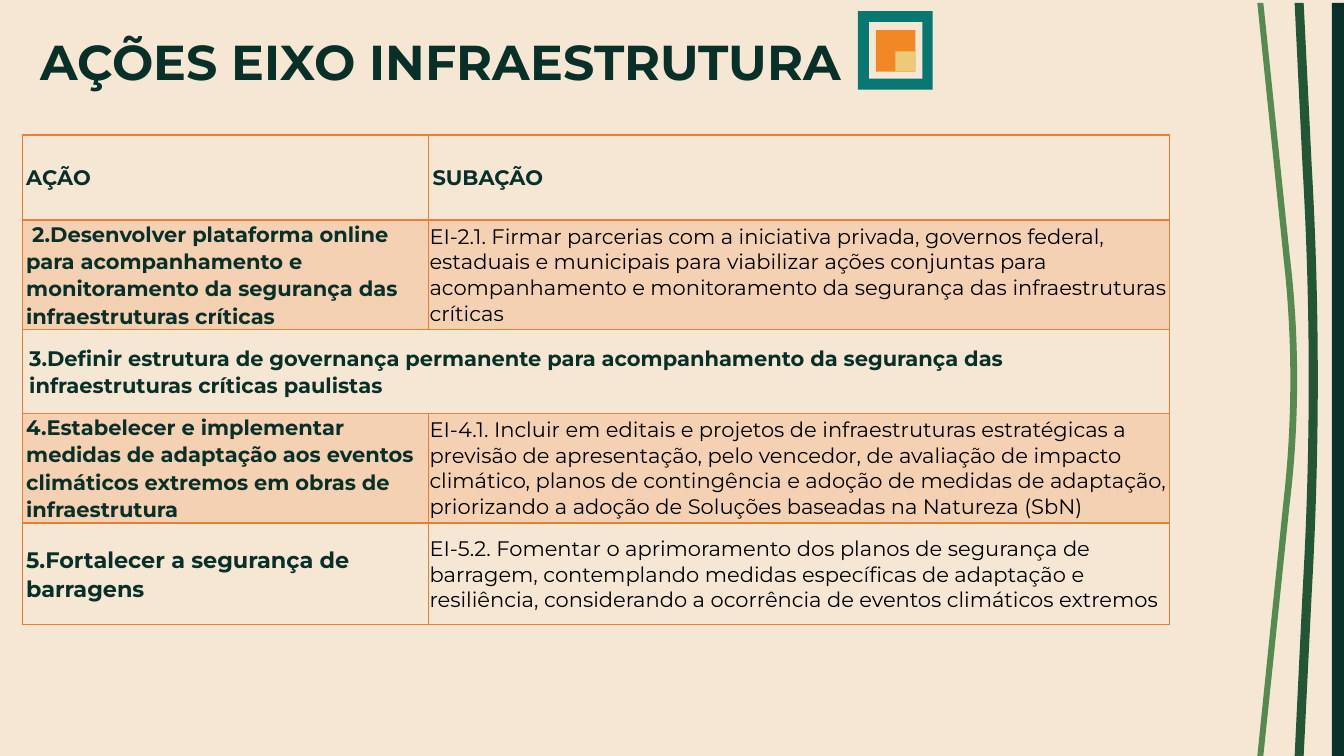
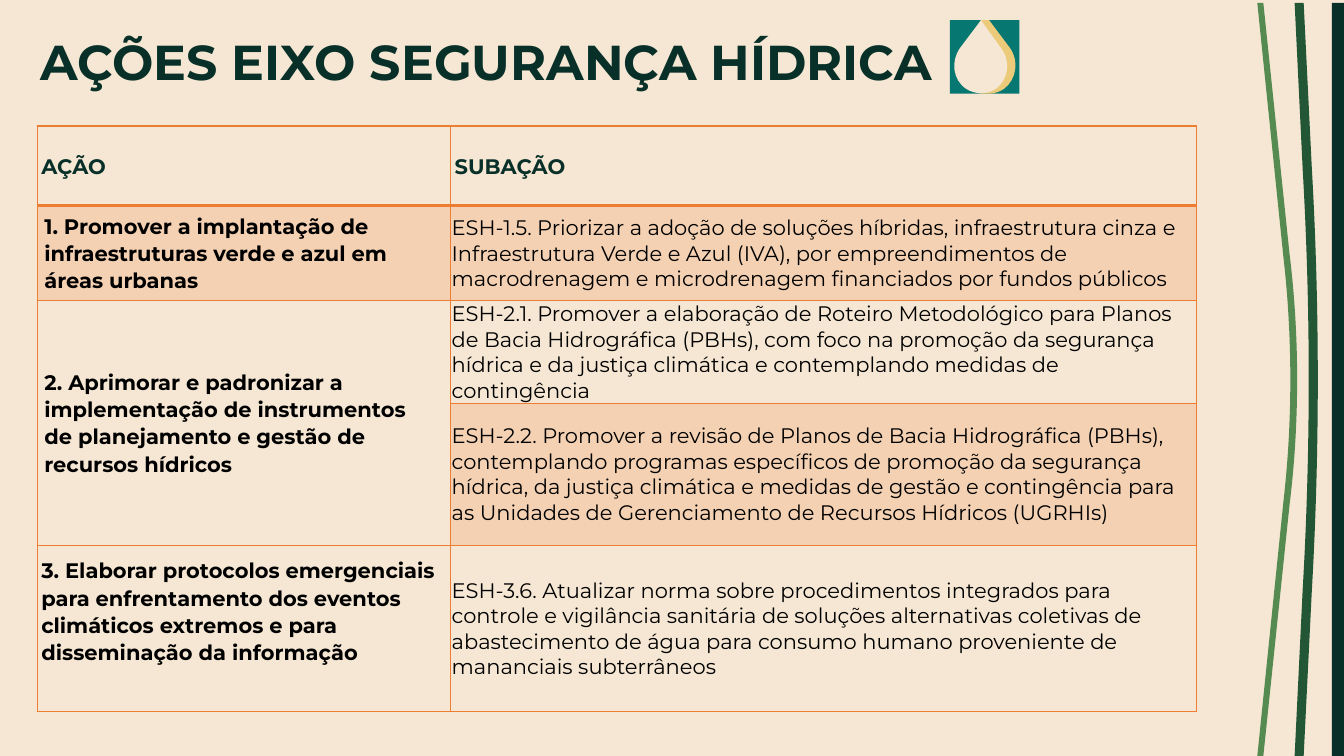
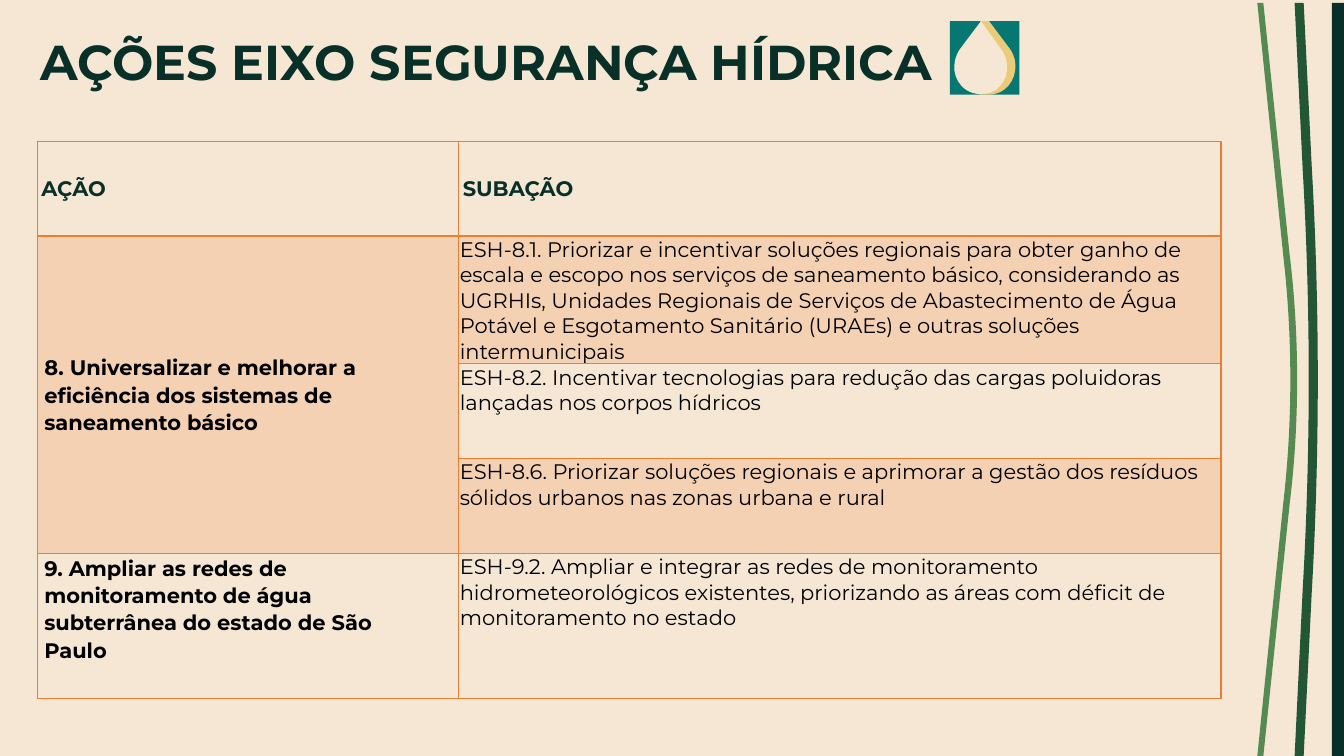
"""Build three slides of climate action tables, by axis."""
from lxml import etree
from pptx import Presentation
from pptx import util as u
from pptx.dml.color import RGBColor
from pptx.enum import shapes, text
from pptx.oxml.ns import qn

CREAM = RGBColor(0xF5, 0xE7, 0xD3)
DARK = RGBColor(0x08, 0x30, 0x28)
FOREST = RGBColor(0x23, 0x56, 0x35)
LEAF = RGBColor(0x55, 0x8A, 0x50)
TEAL = RGBColor(0x07, 0x78, 0x71)
SAND = RGBColor(0xEB, 0xCB, 0x7A)
AMBER = RGBColor(0xF1, 0x88, 0x25)
ORANGE = RGBColor(0xED, 0x7D, 0x31)
BLACK = RGBColor(0, 0, 0)
FONT = "Montserrat"

presentation = Presentation()
presentation.slide_width = u.Inches(13.33)
presentation.slide_height = u.Inches(7.5)
GRID = presentation.slide_height / 7.5


def paint(shape, color):
    """Give a shape a plain fill without line or shadow."""
    shape.fill.solid()
    shape.fill.fore_color.rgb = color
    shape.line.fill.background()
    shape.shadow.inherit = False


def draw_outline(slide, color, left, top, segments):
    """Draw a closed outline of points (x, y) and cubic curves (six numbers)."""
    points = [segment[i:i + 2] for segment in segments for i in range(0, len(segment), 2)]
    placed = [((left + x) * GRID, (top + y) * GRID) for x, y in points]
    builder = slide.shapes.build_freeform(*placed[0], scale=1.0)
    builder.add_line_segments(placed[1:], close=True)
    shape = builder.convert_to_shape()
    paint(shape, color)
    outline = shape._element.find(".//" + qn("a:path"))
    lines = iter(outline.findall(qn("a:lnTo")))
    for segment in segments[1:]:
        steps = [next(lines) for _ in range(len(segment) // 2)]
        if len(steps) == 3:
            curve = etree.SubElement(outline, qn("a:cubicBezTo"))
            steps[0].addprevious(curve)
            for step in steps:
                curve.append(step[0])
                outline.remove(step)


STRIPES = [
    (FOREST, [(12.93, 0.03), (12.84, 0.03), (12.92, 1.68), (13, 3.06, 13, 4.47, 12.92, 5.85),
              (12.84, 7.5), (12.93, 7.5), (13.01, 5.88), (13.09, 4.48, 13.09, 3.05, 13.01, 1.65)]),
    (LEAF, [(12.79, 2.52), (12.53, 0.03), (12.47, 0.03), (12.73, 2.56),
            (12.82, 3.35, 12.82, 4.18, 12.73, 4.97), (12.47, 7.5), (12.53, 7.5),
            (12.79, 5.01), (12.89, 4.2, 12.89, 3.33, 12.79, 2.52)]),
]
SQUARES = [
    (TEAL, 0, 0, 0.74, 0.78),
    (CREAM, 0.11, 0.11, 0.53, 0.56),
    (AMBER, 0.18, 0.19, 0.39, 0.41),
    (SAND, 0.37, 0.4, 0.2, 0.2),
]
DROP_FRAME = [(TEAL, 0, 0, 0.69, 0.73)]
DROP = [
    (SAND, [(0.39, 0), (0.31, 0), (0.18, 0.28), (0.09, 0.41, 0.12, 0.59, 0.24, 0.68),
            (0.28, 0.71, 0.3, 0.73, 0.3, 0.73), (0.39, 0.73), (0.44, 0.73, 0.5, 0.71, 0.54, 0.68),
            (0.66, 0.59, 0.69, 0.41, 0.6, 0.28)]),
    (CREAM, [(0.31, 0), (0.1, 0.28), (0.01, 0.41, 0.03, 0.59, 0.16, 0.68),
             (0.25, 0.74, 0.37, 0.74, 0.46, 0.68), (0.58, 0.59, 0.61, 0.41, 0.51, 0.28)]),
]

WIDE = {"left": 0.07, "right": 0.25}
LIFTED = {"bottom": 0.34}
INFRASTRUCTURE_ROWS = [
    (1.09, " 2.Desenvolver plataforma online para acompanhamento e monitoramento da segurança das infraestruturas críticas",
     "EI-2.1. Firmar parcerias com a iniciativa privada, governos federal, estaduais e municipais para viabilizar ações conjuntas para acompanhamento e monitoramento da segurança das infraestruturas críticas", {}),
    (0.83, "3.Definir estrutura de governança permanente para acompanhamento da segurança das infraestruturas críticas paulistas",
     None, WIDE),
    (1.09, "4.Estabelecer e implementar medidas de adaptação aos eventos climáticos extremos em obras de infraestrutura",
     "EI-4.1. Incluir em editais e projetos de infraestruturas estratégicas a previsão de apresentação, pelo vencedor, de avaliação de impacto climático, planos de contingência e adoção de medidas de adaptação, priorizando a adoção de Soluções baseadas na Natureza (SbN)", {}),
    (1.01, "5.Fortalecer a segurança de barragens",
     "EI-5.2. Fomentar o aprimoramento dos planos de segurança de barragem, contemplando medidas específicas de adaptação e resiliência, considerando a ocorrência de eventos climáticos extremos", {"size": 16}),
]
WATER_ROWS = [
    (0.94, "1. Promover a implantação de infraestruturas verde e azul em áreas urbanas",
     "ESH-1.5. Priorizar a adoção de soluções híbridas, infraestrutura cinza e Infraestrutura Verde e Azul (IVA), por empreendimentos de macrodrenagem e microdrenagem financiados por fundos públicos", WIDE),
    (1.02, "2. Aprimorar e padronizar a implementação de instrumentos de planejamento e gestão de recursos hídricos",
     "ESH-2.1. Promover a elaboração de Roteiro Metodológico para Planos de Bacia Hidrográfica (PBHs), com foco na promoção da segurança hídrica e da justiça climática e contemplando medidas de contingência", WIDE),
    (1.41, None,
     "ESH-2.2. Promover a revisão de Planos de Bacia Hidrográfica (PBHs), contemplando programas específicos de promoção da segurança hídrica, da justiça climática e medidas de gestão e contingência para as Unidades de Gerenciamento de Recursos Hídricos (UGRHIs)", {}),
    (1.65, "3. Elaborar protocolos emergenciais para enfrentamento dos eventos climáticos extremos e para disseminação da informação",
     "ESH-3.6. Atualizar norma sobre procedimentos integrados para controle e vigilância sanitária de soluções alternativas coletivas de abastecimento de água para consumo humano proveniente de mananciais subterrâneos", LIFTED),
]
SANITATION_ROWS = [
    (1.27, "8. Universalizar e melhorar a eficiência dos sistemas de saneamento básico",
     "ESH-8.1. Priorizar e incentivar soluções regionais para obter ganho de escala e escopo nos serviços de saneamento básico, considerando as UGRHIs, Unidades Regionais de Serviços de Abastecimento de Água Potável e Esgotamento Sanitário (URAEs) e outras soluções intermunicipais", WIDE),
    (0.94, None, "ESH-8.2. Incentivar tecnologias para redução das cargas poluidoras lançadas nos corpos hídricos", {}),
    (0.94, None, "ESH-8.6. Priorizar soluções regionais e aprimorar a gestão dos resíduos sólidos urbanos nas zonas urbana e rural", {}),
    (1.44, "9. Ampliar as redes de monitoramento de água subterrânea do estado de São Paulo",
     "ESH-9.2. Ampliar e integrar as redes de monitoramento hidrometeorológicos existentes, priorizando as áreas com déficit de monitoramento no estado", WIDE | LIFTED),
]
MIDDLE, TOP = text.MSO_ANCHOR.MIDDLE, text.MSO_ANCHOR.TOP
SLIDES = [
    {"title": "AÇÕES EIXO INFRAESTRUTURA", "icon": (8.51, 0.11), "squares": SQUARES, "drop": [],
     "table": (0.22, 1.34), "columns": (4.03, 7.35), "header": 0.84,
     "rows": INFRASTRUCTURE_ROWS, "action_color": DARK, "anchor": MIDDLE},
    {"title": "AÇÕES EIXO SEGURANÇA HÍDRICA", "icon": (9.42, 0.2), "squares": DROP_FRAME, "drop": DROP,
     "table": (0.37, 1.25), "columns": (4.1, 7.4), "header": 0.79,
     "rows": WATER_ROWS, "action_color": BLACK, "anchor": MIDDLE},
    {"title": "AÇÕES EIXO SEGURANÇA HÍDRICA", "icon": (9.42, 0.21), "squares": DROP_FRAME, "drop": DROP,
     "table": (0.37, 1.4), "columns": (4.18, 7.56), "header": 0.94,
     "rows": SANITATION_ROWS, "action_color": BLACK, "anchor": TOP},
]

background = presentation.slide_master.background.fill
background.solid()
background.fore_color.rgb = CREAM

for content in SLIDES:
    slide = presentation.slides.add_slide(presentation.slide_layouts[6])
    icon_left, icon_top = content["icon"]

    for color, outline in STRIPES:
        draw_outline(slide, color, 0, 0, outline)
    rectangles = [(DARK, 13.21, 0.03, 0.12, 7.47)]
    rectangles += [(color, icon_left + x, icon_top + y, w, h) for color, x, y, w, h in content["squares"]]
    for color, *box in rectangles:
        place = [round(length * GRID) for length in box]
        paint(slide.shapes.add_shape(shapes.MSO_SHAPE.RECTANGLE, *place), color)
    for color, outline in content["drop"]:
        draw_outline(slide, color, icon_left, icon_top, outline)

    title_box = slide.shapes.add_textbox(*[round(length * GRID) for length in (0.3, 0.21, 11.5, 0.86)])
    title_frame = title_box.text_frame
    title_frame.word_wrap = True
    title_frame.vertical_anchor = MIDDLE
    title = title_frame.paragraphs[0]
    title.text = content["title"]
    title.line_spacing = 0.9
    for name, value in {"name": FONT, "size": u.Pt(35), "bold": True}.items():
        setattr(title.font, name, value)
    title.font.color.rgb = DARK

    rows = [(content["header"], "AÇÃO", "SUBAÇÃO", {}), *content["rows"]]
    heights = [row[0] for row in rows]
    box = (*content["table"], sum(content["columns"]), sum(heights))
    table = slide.shapes.add_table(len(rows), 2, *[round(length * GRID) for length in box]).table
    table.first_row = table.horz_banding = False
    for column, width in zip(table.columns, content["columns"]):
        column.width = round(width * GRID)

    action_row = 0
    for row_index, (height, action, subaction, changes) in enumerate(rows):
        table.rows[row_index].height = round(height * GRID)
        is_header = row_index == 0
        for column_index, wording in enumerate((action, subaction)):
            cell = table.cell(row_index, column_index)
            is_strong = is_header or column_index == 0
            style = {"left": 0.01, "right": 0.01, "top": 0.01, "bottom": 0, "size": 15}
            if is_strong:
                style |= {"left": 0.04, "right": 0.04, "top": 0} | changes
            for side in ("left", "right", "top", "bottom"):
                setattr(cell, "margin_" + side, round(style[side] * GRID))
            cell.vertical_anchor = MIDDLE if is_strong else content["anchor"]

            properties = cell._tc.get_or_add_tcPr()
            thick_side = {0: "lnB", 1: "lnT"}.get(row_index)
            for side in ("lnL", "lnR", "lnT", "lnB"):
                width = u.Pt(2 if side == thick_side else 1)
                line = etree.SubElement(properties, qn("a:" + side), w=str(width))
                line_fill = etree.SubElement(line, qn("a:solidFill"))
                etree.SubElement(line_fill, qn("a:srgbClr"), val=str(ORANGE))
            if row_index % 2:
                cell.fill.solid()
                cell.fill.fore_color.rgb = ORANGE
                fill_color = properties.find(qn("a:solidFill")).find(qn("a:srgbClr"))
                etree.SubElement(fill_color, qn("a:alpha"), val="20000")
            else:
                cell.fill.background()

            if wording is None:
                continue
            paragraph = cell.text_frame.paragraphs[0]
            paragraph.text = wording
            if is_strong:
                paragraph.line_spacing = 1.07
                paragraph.space_after = u.Pt(6)
            for name, value in {"name": FONT, "size": u.Pt(style["size"]), "bold": is_strong}.items():
                setattr(paragraph.font, name, value)
            strong_color = DARK if is_header else content["action_color"]
            paragraph.font.color.rgb = strong_color if is_strong else BLACK

        if subaction is None:
            table.cell(row_index, 0).merge(table.cell(row_index, 1))
        if action is not None:
            action_row = row_index
        elif row_index + 1 == len(rows) or rows[row_index + 1][1] is not None:
            table.cell(action_row, 0).merge(table.cell(row_index, 0))

presentation.save("out.pptx")
